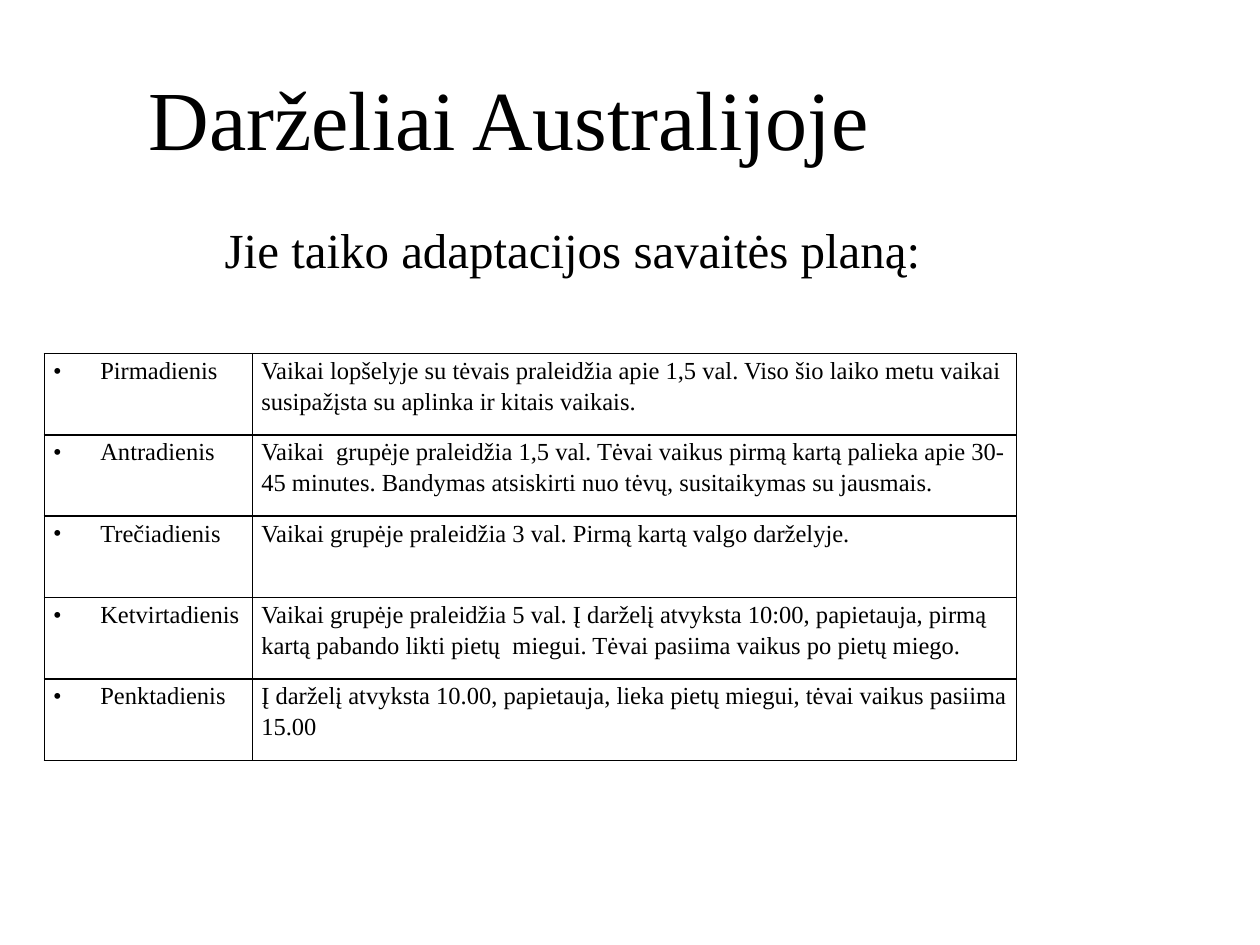
from lxml.etree import SubElement
from pptx import Presentation
from pptx.dml.color import RGBColor
from pptx.enum.text import MSO_ANCHOR, PP_ALIGN
from pptx.oxml.ns import qn
from pptx.util import Pt

FONT = "Times New Roman"
INK = "000000"
HANGING = 27
WEEK_PLAN = [
    ("Pirmadienis", "Vaikai lopšelyje su tėvais praleidžia apie 1,5 val. Viso šio laiko metu "
                    "vaikai susipažįsta su aplinka ir kitais vaikais."),
    ("Antradienis", "Vaikai  grupėje praleidžia 1,5 val. Tėvai vaikus pirmą kartą palieka apie "
                    "30-45 minutes. Bandymas atsiskirti nuo tėvų, susitaikymas su jausmais."),
    ("Trečiadienis", "Vaikai grupėje praleidžia 3 val. Pirmą kartą valgo darželyje."),
    ("Ketvirtadienis", "Vaikai grupėje praleidžia 5 val. Į darželį atvyksta 10:00, papietauja, "
                       "pirmą kartą pabando likti pietų  miegui. Tėvai pasiima vaikus po pietų miego."),
    ("Penktadienis", "Į darželį atvyksta 10.00, papietauja, lieka pietų miegui, tėvai vaikus "
                     "pasiima 15.00"),
]


def color(value):
    return RGBColor.from_string(value)


def style(paragraph, size):
    for run in paragraph.runs:
        run.font.name = FONT
        run.font.size = Pt(size)
        run.font.color.rgb = color(INK)


def place_title(slide, left, top, width, height):
    title = slide.shapes.title
    title.left, title.top, title.width, title.height = map(Pt, (left, top, width, height))
    frame = title.text_frame
    frame.text = "Darželiai Australijoje"
    frame.vertical_anchor = MSO_ANCHOR.MIDDLE
    heading = frame.paragraphs[0]
    heading.alignment = PP_ALIGN.CENTER
    style(heading, 48)


def add_intro(slide, left, top, width, height):
    frame = slide.shapes.add_textbox(*map(Pt, (left, top, width, height))).text_frame
    frame.word_wrap = True
    frame.text = "Jie taiko adaptacijos savaitės planą:"
    intro = frame.paragraphs[0]
    intro._p.get_or_add_pPr().set("marL", str(Pt(99)))
    style(intro, 28)


def add_bullet(paragraph):
    properties = paragraph._p.get_or_add_pPr()
    properties.set("marL", str(Pt(HANGING)))
    properties.set("indent", str(Pt(-HANGING)))
    SubElement(properties, qn("a:buFont"), typeface=FONT)
    SubElement(properties, qn("a:buChar"), char="•")


def add_borders(cell):
    properties = cell._tc.get_or_add_tcPr()
    for index, side in enumerate(("a:lnL", "a:lnR", "a:lnT", "a:lnB")):
        border = properties.makeelement(qn(side), {"w": str(Pt(1))})
        fill = SubElement(border, qn("a:solidFill"))
        SubElement(fill, qn("a:srgbClr"), val=INK)
        properties.insert(index, border)


def fill_cell(cell, text, bulleted):
    cell.fill.background()
    add_borders(cell)
    cell.margin_left = cell.margin_right = Pt(5)
    cell.margin_top = cell.margin_bottom = 0
    cell.text_frame.text = text
    paragraph = cell.text_frame.paragraphs[0]
    if bulleted:
        add_bullet(paragraph)
    paragraph.line_spacing = 1.15
    style(paragraph, 14)


def add_week_plan(slide, left, top, width, height, day_width):
    table = slide.shapes.add_table(len(WEEK_PLAN), 2, *map(Pt, (left, top, width, height))).table
    table.first_row = table.horz_banding = False
    table.columns[0].width = Pt(day_width)
    table.columns[1].width = Pt(width - day_width)
    for row, (day, activity) in enumerate(WEEK_PLAN):
        fill_cell(table.cell(row, 0), day, True)
        fill_cell(table.cell(row, 1), activity, False)


def main():
    presentation = Presentation()
    presentation.slide_width, presentation.slide_height = Pt(720), Pt(540)
    slide = presentation.slides.add_slide(presentation.slide_layouts[5])
    place_title(slide, 23.75, 21.6, 534.25, 90)
    add_intro(slide, 22.3, 122, 562.3, 373)
    add_week_plan(slide, 25.3, 202, 555.6, 232.5, 119)
    presentation.save("out.pptx")


if __name__ == "__main__":
    main()
